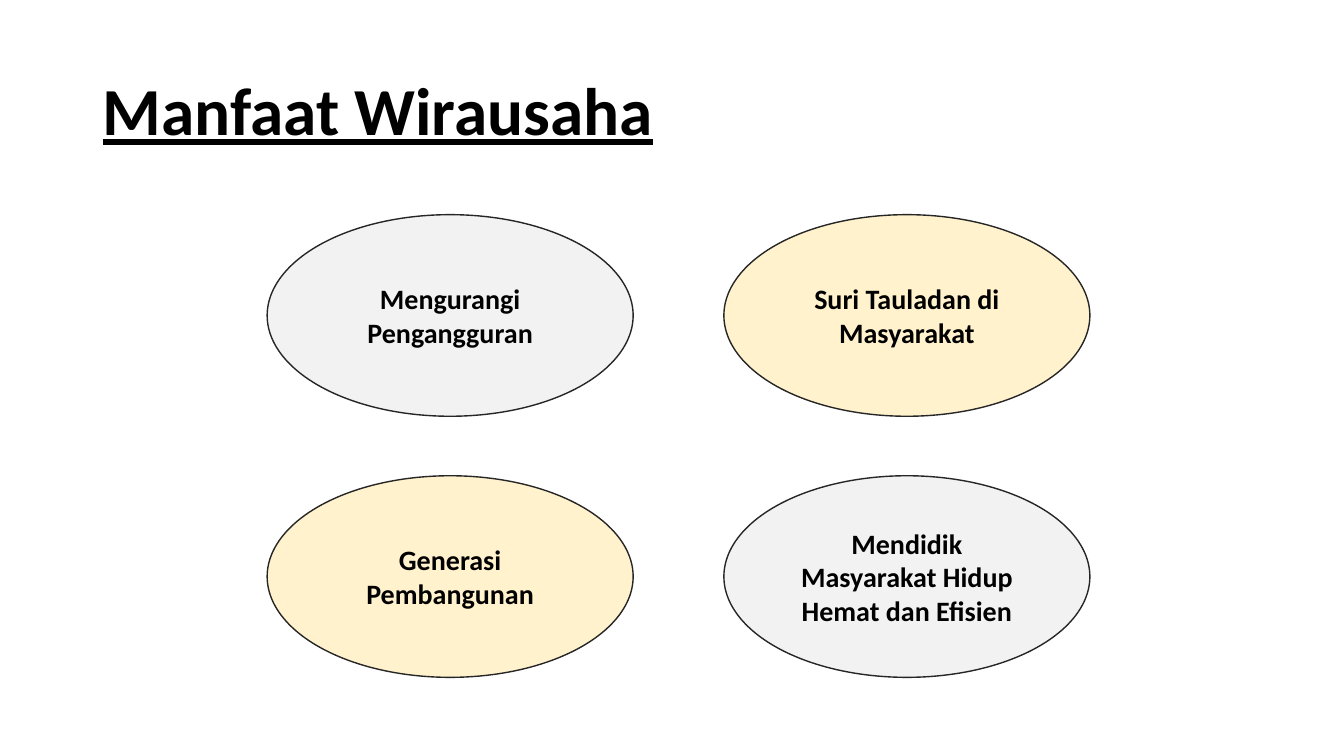
from dataclasses import dataclass

import pptx
import pptx.dml.color
import pptx.enum.shapes
import pptx.enum.text
import pptx.shapes.autoshape
import pptx.slide
import pptx.util

Inches = pptx.util.Inches
BLACK, OUTLINE, GREY, CREAM = "000000", "262626", "F2F2F2", "FFF2CC"
LEFT, TOP = 2.65, 2.13
COLUMN_STEP, ROW_STEP = 4.53, 2.59
WIDTH, HEIGHT = 3.63, 2
TITLE_FORMAT = {"name": "Calibri", "size": pptx.util.Pt(48), "bold": True, "underline": True}
BENEFIT_FORMAT = {"name": "Calibri", "size": pptx.util.Pt(20), "bold": True}


@dataclass(frozen=True)
class Benefit:
    text: str
    column: int
    row: int


BENEFITS = [
    Benefit("Mengurangi Pengangguran", 0, 0),
    Benefit("Mendidik Masyarakat Hidup Hemat dan Efisien", 1, 1),
    Benefit("Suri Tauladan di Masyarakat", 1, 0),
    Benefit("Generasi Pembangunan", 0, 1),
]


def color(value: str) -> pptx.dml.color.RGBColor:
    return pptx.dml.color.RGBColor.from_string(value)


def write_text(box: pptx.shapes.autoshape.Shape, text: str, font_format: dict, para_format: dict) -> None:
    frame = box.text_frame
    frame.word_wrap = True
    frame.vertical_anchor = pptx.enum.text.MSO_ANCHOR.MIDDLE
    para = frame.paragraphs[0]
    for name, value in para_format.items():
        setattr(para, name, value)
    span = para.add_run()
    span.text = text
    for name, value in font_format.items():
        setattr(span.font, name, value)
    span.font.color.rgb = color(BLACK)


def draw_title(page: pptx.slide.Slide) -> None:
    box = page.shapes.add_textbox(Inches(0.92), Inches(0.4), Inches(11.5), Inches(1.45))
    write_text(box, "Manfaat Wirausaha", TITLE_FORMAT, {"line_spacing": 0.9})


def draw_benefit(page: pptx.slide.Slide, benefit: Benefit) -> None:
    ellipse = page.shapes.add_shape(
        pptx.enum.shapes.MSO_SHAPE.OVAL,
        Inches(LEFT + benefit.column * COLUMN_STEP),
        Inches(TOP + benefit.row * ROW_STEP),
        Inches(WIDTH),
        Inches(HEIGHT),
    )
    ellipse.shadow.inherit = False
    ellipse.fill.solid()
    ellipse.fill.fore_color.rgb = color(GREY if benefit.column == benefit.row else CREAM)
    ellipse.line.color.rgb = color(OUTLINE)
    ellipse.line.width = pptx.util.Pt(1)
    write_text(ellipse, benefit.text, BENEFIT_FORMAT, {"alignment": pptx.enum.text.PP_ALIGN.CENTER})


def main() -> None:
    deck = pptx.Presentation()
    deck.slide_width = Inches(13.33)
    deck.slide_height = Inches(7.5)
    page = deck.slides.add_slide(deck.slide_layouts[6])
    draw_title(page)
    for benefit in BENEFITS:
        draw_benefit(page, benefit)
    deck.save("out.pptx")


if __name__ == "__main__":
    main()
